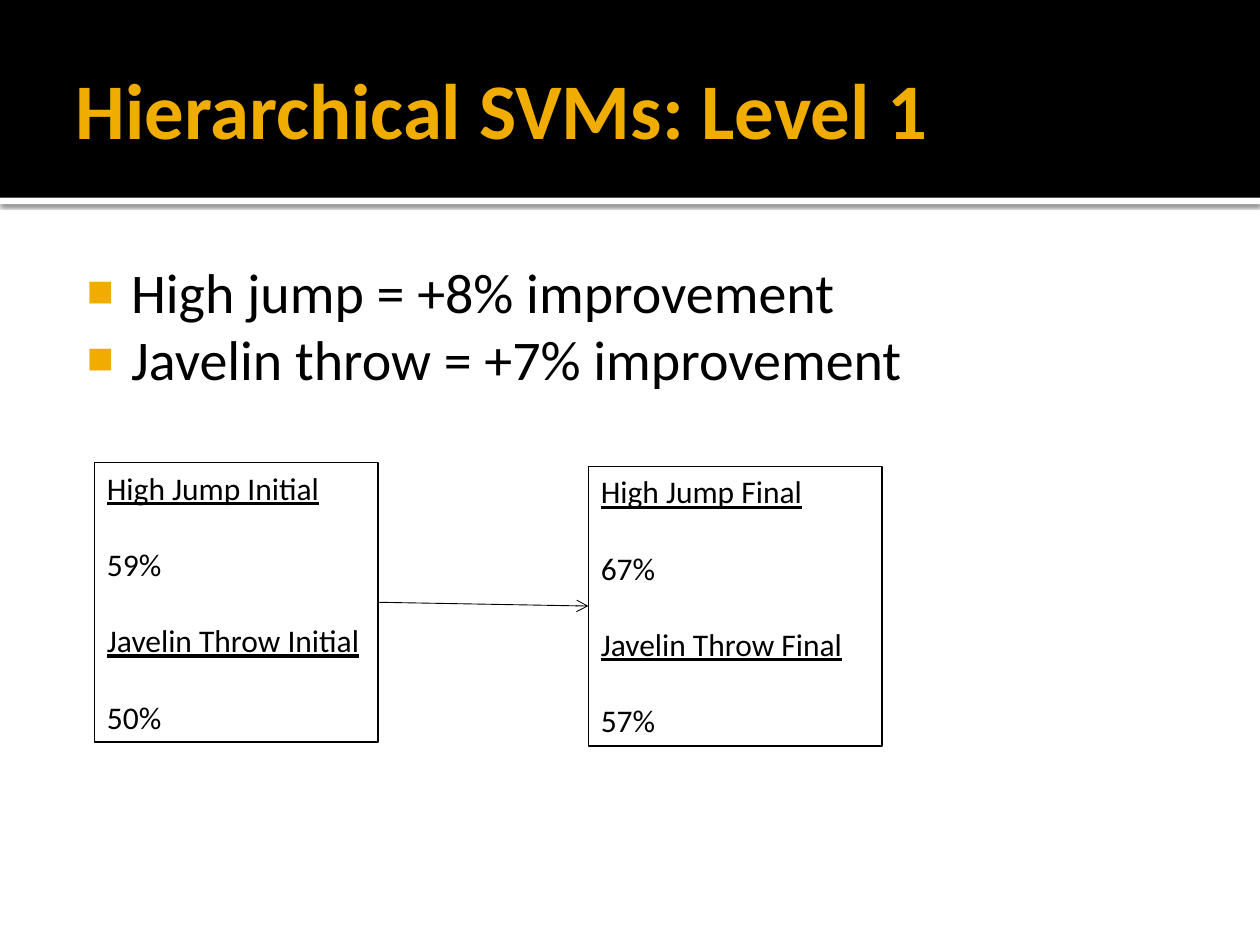
from dataclasses import dataclass

from lxml import etree
from pptx import Presentation
from pptx.dml.color import RGBColor
from pptx.enum.shapes import MSO_CONNECTOR, MSO_SHAPE
from pptx.enum.text import MSO_ANCHOR, MSO_AUTO_SIZE, PP_ALIGN
from pptx.oxml.ns import qn
from pptx.util import Emu, Inches, Pt

RECTANGLE = MSO_SHAPE.RECTANGLE
STRAIGHT = MSO_CONNECTOR.STRAIGHT
TOP, MIDDLE = MSO_ANCHOR.TOP, MSO_ANCHOR.MIDDLE
FIXED, GROW = MSO_AUTO_SIZE.NONE, MSO_AUTO_SIZE.SHAPE_TO_FIT_TEXT
LEFT = PP_ALIGN.LEFT

COLORS = {"ink": "000000", "paper": "FFFFFF", "accent": "F0AD00"}
FONT = "Calibri"
WIDTH, HEIGHT = 10, 7.5
MARGIN = 0.05 * WIDTH
HEADER_HEIGHT = 1.57
RESULT_GAP = 22  # one line of 18 pt text

TITLE = "Hierarchical SVMs: Level 1"
IMPROVEMENTS = ["High jump = +8% improvement", "Javelin throw = +7% improvement"]


@dataclass
class Stage:
    name: str
    left: float
    top: float
    width: float
    high_jump: str
    javelin: str
    height: float = 2.22

    def lines(self) -> list[str]:
        return [f"High Jump {self.name}", self.high_jump,
                f"Javelin Throw {self.name}", self.javelin]


STAGES = [
    Stage("Initial", 0.75, 3.67, 2.25, "59%", "50%"),
    Stage("Final", 4.67, 3.7, 2.33, "67%", "57%"),
]


def color(name: str) -> RGBColor:
    return RGBColor.from_string(COLORS[name])


def place(shape, left: float, top: float, width: float, height: float) -> None:
    shape.left, shape.top = Inches(left), Inches(top)
    shape.width, shape.height = Inches(width), Inches(height)


def set_frame(frame, **formats) -> None:
    for name, value in formats.items():
        setattr(frame, name, value)


def write(paragraph, text: str, size: float, ink: str = "ink", **formats) -> None:
    run = paragraph.add_run()
    run.text = text
    run.font.color.rgb = color(ink)
    for name, value in {"name": FONT, "size": Pt(size), **formats}.items():
        setattr(run.font, name, value)


def paragraphs(frame, count: int) -> list:
    return [frame.paragraphs[0]] + [frame.add_paragraph() for _ in range(count - 1)]


def add_square_bullet(paragraph) -> None:
    properties = paragraph._p.get_or_add_pPr()
    properties.set("marL", str(Inches(0.48)))
    properties.set("indent", str(Inches(-0.35)))
    bullet_color = etree.SubElement(properties, qn("a:buClr"))
    etree.SubElement(bullet_color, qn("a:srgbClr"), val=COLORS["accent"])
    etree.SubElement(properties, qn("a:buSzPct"), val="80000")
    etree.SubElement(properties, qn("a:buFont"), typeface="Arial")
    etree.SubElement(properties, qn("a:buChar"), char="■")


def add_band(slide, top: float, height: float, fill: str):
    """Add a full-width band behind everything else."""
    band = slide.shapes.add_shape(RECTANGLE, 0, Inches(top), Inches(WIDTH), Inches(height))
    band.shadow.inherit = False
    band.fill.solid()
    band.fill.fore_color.rgb = color(fill)
    band.line.fill.background()
    slide.shapes._spTree.insert(2, band._element)
    return band


def add_drop_shadow(shape) -> None:
    effects = shape._element.spPr.find(qn("a:effectLst"))
    shadow = etree.SubElement(effects, qn("a:outerShdw"), blurRad=str(Pt(2.5)),
                              dist=str(Pt(0.8)), dir="5400000", rotWithShape="0")
    shade = etree.SubElement(shadow, qn("a:srgbClr"), val=COLORS["ink"])
    etree.SubElement(shade, qn("a:alpha"), val="60000")


def fill_title(title) -> None:
    place(title, MARGIN, 0.17, WIDTH - 2 * MARGIN, 1.37)
    frame = title.text_frame
    set_frame(frame, vertical_anchor=MIDDLE, auto_size=FIXED, word_wrap=True,
              margin_left=Inches(0.1), margin_right=Inches(0.05))
    frame.paragraphs[0].alignment = LEFT
    write(frame.paragraphs[0], TITLE, 45, "accent", bold=True)


def fill_improvements(body) -> None:
    place(body, MARGIN, 1.94, WIDTH - 2 * MARGIN, 5.06)
    frame = body.text_frame
    set_frame(frame, vertical_anchor=TOP, auto_size=FIXED, word_wrap=True,
              margin_left=Inches(0.06), margin_top=Inches(0.1))
    for paragraph, text in zip(paragraphs(frame, len(IMPROVEMENTS)), IMPROVEMENTS):
        paragraph.space_before = Pt(0)
        add_square_bullet(paragraph)
        write(paragraph, text, 32)


def add_stage(slide, stage: Stage):
    box = slide.shapes.add_shape(RECTANGLE, Emu(0), Emu(0), Emu(0), Emu(0))
    place(box, stage.left, stage.top, stage.width, stage.height)
    box.shadow.inherit = False
    box.fill.background()
    box.line.color.rgb = color("ink")
    box.line.width = Pt(0.75)
    frame = box.text_frame
    set_frame(frame, vertical_anchor=TOP, auto_size=GROW, word_wrap=True)
    lines = stage.lines()
    for row, (paragraph, text) in enumerate(zip(paragraphs(frame, len(lines)), lines)):
        paragraph.alignment = LEFT
        paragraph.space_before = Pt(RESULT_GAP if row else 0)
        write(paragraph, text, 18, underline=row % 2 == 0)
    return box


def add_arrow(slide, start, end) -> None:
    arrow = slide.shapes.add_connector(STRAIGHT, 0, 0, 0, 0)
    arrow.begin_connect(start, 3)
    arrow.end_connect(end, 1)
    arrow.line.color.rgb = color("ink")
    arrow.line.width = Pt(0.5)
    etree.SubElement(arrow.line._get_or_add_ln(), qn("a:tailEnd"), type="arrow")
    etree.SubElement(arrow._element.spPr, qn("a:effectLst"))


def main() -> None:
    deck = Presentation()
    deck.slide_width, deck.slide_height = Inches(WIDTH), Inches(HEIGHT)
    slide = deck.slides.add_slide(deck.slide_layouts[1])
    slide.background.fill.solid()
    slide.background.fill.fore_color.rgb = color("paper")

    add_band(slide, 0, HEADER_HEIGHT, "ink")
    add_drop_shadow(add_band(slide, HEADER_HEIGHT, 0.05, "paper"))
    fill_title(slide.shapes.title)
    fill_improvements(slide.placeholders[1])
    initial, final = [add_stage(slide, stage) for stage in STAGES]
    add_arrow(slide, initial, final)
    deck.save("out.pptx")


if __name__ == "__main__":
    main()
